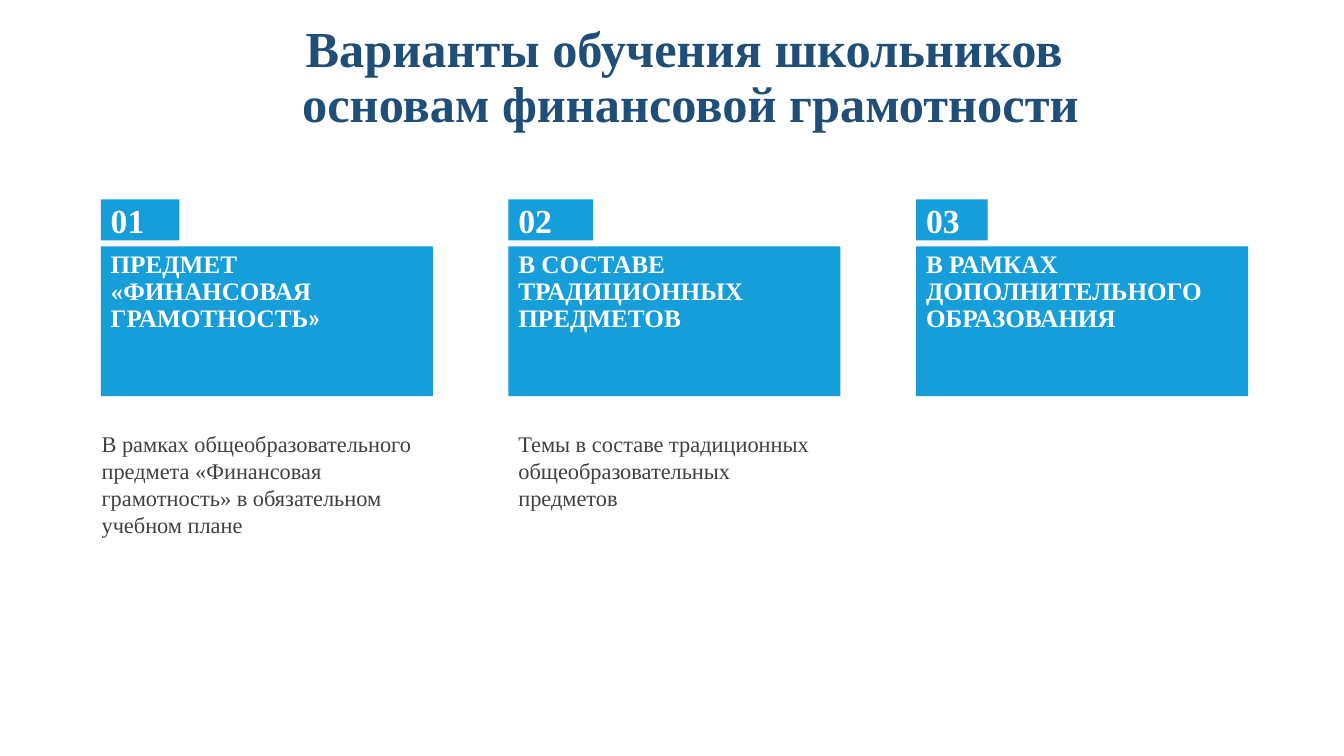
from pptx import Presentation
from pptx.dml.color import RGBColor
from pptx.enum.shapes import MSO_SHAPE
from pptx.enum.text import MSO_ANCHOR, MSO_AUTO_SIZE, PP_ALIGN
from pptx.util import Pt

WHITE = RGBColor.from_string("FFFFFF")
THEME = {
    "fill": RGBColor.from_string("159EDA"),
    "title": {"size": Pt(36), "bold": True, "color": RGBColor.from_string("1F4E79")},
    "number": {"size": Pt(24), "bold": True, "color": WHITE},
    "heading": {"size": Pt(18), "bold": True, "color": WHITE},
    "description": {"size": Pt(16), "bold": False, "color": RGBColor.from_string("404040")},
}
FRAME = {"word_wrap": True, "auto_size": MSO_AUTO_SIZE.NONE, "vertical_anchor": MSO_ANCHOR.TOP}


def write(shape, style, pieces, align=PP_ALIGN.LEFT, spacing=0.9):
    """Fill the shape with one paragraph made of (text, font name) pieces."""
    for name, value in FRAME.items():
        setattr(shape.text_frame, name, value)
    para = shape.text_frame.paragraphs[0]
    para.alignment = align
    para.line_spacing = spacing
    for text, font_name in pieces:
        for index, line in enumerate(text.split("\n")):
            if index:
                para.add_line_break()
            span = para.add_run()
            span.text = line
            span.font.name = font_name
            span.font.size = THEME[style]["size"]
            span.font.bold = THEME[style]["bold"]
            span.font.color.rgb = THEME[style]["color"]


def add_panel(page, left, top, width, height):
    panel = page.shapes.add_shape(MSO_SHAPE.RECTANGLE, Pt(left), Pt(top), Pt(width), Pt(height))
    panel.shadow.inherit = False
    panel.fill.solid()
    panel.fill.fore_color.rgb = THEME["fill"]
    panel.line.fill.background()
    return panel


SERIF = "Times New Roman"
deck = Presentation()
deck.slide_width, deck.slide_height = Pt(960), Pt(540)
page = deck.slides.add_slide(deck.slide_layouts[5])

title = page.shapes.title
title.left, title.top, title.width, title.height = Pt(65.5), Pt(13.7), Pt(855.4), Pt(50.4)
write(title, "title", [("Варианты обучения школьников \nосновам финансовой грамотности", SERIF)],
      align=PP_ALIGN.CENTER)

# Number width, heading pieces
variants = [
    (56.2, [("ПРЕДМЕТ «ФИНАНСОВАЯ ГРАМОТНОСТЬ", SERIF), ("»", "Lato")]),
    (60.5, [("В СОСТАВЕ ТРАДИЦИОННЫХ ПРЕДМЕТОВ", SERIF)]),
    (51.1, [("В РАМКАХ ДОПОЛНИТЕЛЬНОГО ОБРАЗОВАНИЯ", SERIF)]),
]
for index, (number_width, heading) in enumerate(variants):
    left = 72 + index * 291.2
    write(add_panel(page, left, 176, 237.2, 107), "heading", heading)
    write(add_panel(page, left, 142.4, number_width, 29.3), "number", [(f"{index + 1:02}", SERIF)])

# Left, width, height, text
descriptions = [
    (65.5, 243.4, 85, "В рамках общеобразовательного предмета «Финансовая грамотность» "
                      "в обязательном учебном плане"),
    (363.2, 223.2, 65.5, "Темы в составе традиционных общеобразовательных предметов"),
]
for left, width, height, text in descriptions:
    box = page.shapes.add_textbox(Pt(left), Pt(304), Pt(width), Pt(height))
    write(box, "description", [(text, SERIF)], spacing=1.0)

deck.save("out.pptx")
